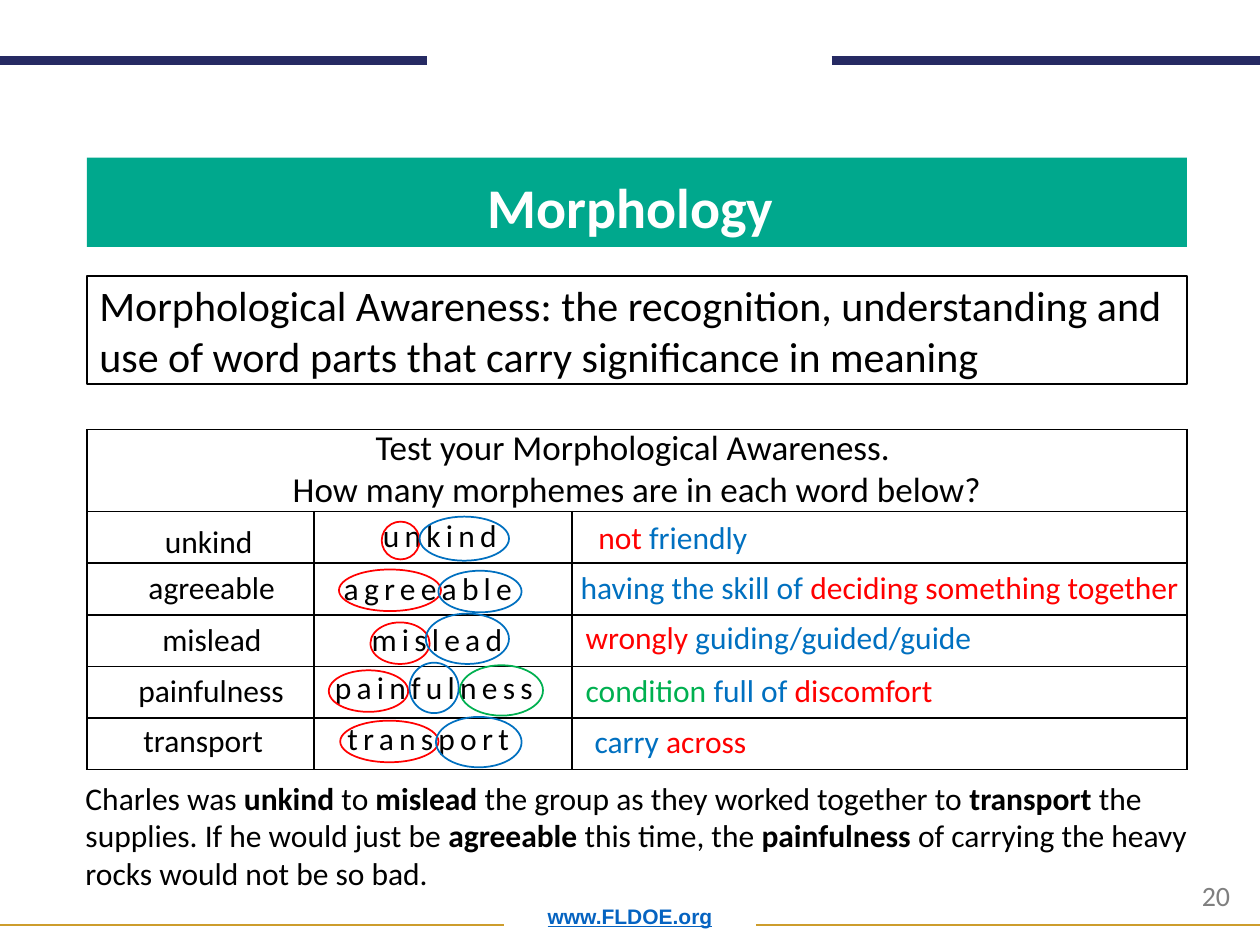
from lxml import etree
from pptx import Presentation
from pptx.dml.color import RGBColor
from pptx.enum.shapes import MSO_CONNECTOR, MSO_SHAPE
from pptx.enum.text import MSO_ANCHOR, MSO_AUTO_SIZE, PP_ALIGN
from pptx.oxml.ns import qn
from pptx.util import Inches, Pt

CENTER = PP_ALIGN.CENTER
BOTTOM = MSO_ANCHOR.BOTTOM
GROW = MSO_AUTO_SIZE.SHAPE_TO_FIT_TEXT
RECTANGLE, OVAL = MSO_SHAPE.RECTANGLE, MSO_SHAPE.OVAL
STRAIGHT = MSO_CONNECTOR.STRAIGHT

WIDTH, HEIGHT = 10, 7.5
LEFT, CONTENT_WIDTH = 0.69, 8.73
TABLE_TOP, HEADER_HEIGHT, ROW_HEIGHT = 3.41, 0.65, 0.41
COLUMNS = (1.8, 2.05, 4.88)
BOX_HEIGHT = 0.4

BLACK, WHITE, GREY = "000000", "FFFFFF", "7F7F7F"
RED, BLUE, GREEN = "FF0000", "0070C0", "00B050"
TEAL, NAVY, GOLD, LINK = "00A88D", "262A63", "CD9D2C", "0563C1"

# Boxes are (left, offset from the row's top, width); ovals add a height.
WORDS = [
    {"word": "unkind", "plain": (1.21, 0.03, 0.91), "spaced": (2.94, -0.01, 1.16),
     "ovals": [(3.03, 0.08, 0.3, 0.3, RED), (3.33, 0.04, 0.71, 0.35, BLUE)],
     "meaning": (4.65, 0, 1.4), "runs": [("not ", RED), ("friendly", BLUE)]},
    {"word": "agreeable", "plain": (1.08, -0.01, 1.22), "spaced": (2.63, 0, 1.64),
     "ovals": [(2.69, 0.05, 0.81, 0.33, RED), (3.48, 0.06, 0.66, 0.33, BLUE)],
     "meaning": (4.51, -0.01, 5.01),
     "runs": [("having the skill of ", BLUE), ("deciding something together", RED)]},
    {"word": "mislead", "plain": (1.19, -0.01, 1), "spaced": (2.85, -0.01, 1.29),
     "ovals": [(2.94, 0.06, 0.47, 0.33, RED), (3.38, -0.01, 0.66, 0.4, BLUE)],
     "meaning": (4.55, -0.02, 3.3),
     "runs": [("wrongly ", RED), ("guiding/guided/guide", BLUE)]},
    {"word": "painfulness", "plain": (1, -0.01, 1.37), "spaced": (2.56, -0.04, 1.83),
     "ovals": [(2.61, 0.03, 0.63, 0.33, RED), (3.25, -0.03, 0.39, 0.4, BLUE),
               (3.65, -0.01, 0.66, 0.4, GREEN)],
     "meaning": (4.55, -0.01, 2.99),
     "runs": [("condition ", GREEN), ("full of ", BLUE), ("discomfort", RED)]},
    {"word": "transport", "plain": (1.04, -0.03, 1.16), "spaced": (2.66, -0.04, 1.54),
     "ovals": [(2.7, 0.02, 0.78, 0.33, RED), (3.46, -0.01, 0.68, 0.4, BLUE)],
     "meaning": (4.62, -0.02, 1.42), "runs": [("carry", BLUE), (" across", RED)]},
]

# Every second piece is a bold practice word.
STORY = ["Charles was ", "unkind", " to ", "mislead",
         " the group as they worked together to ", "transport",
         " the supplies. If he would just be ", "agreeable", " this time, the ",
         "painfulness", " of carrying the heavy rocks would not be so bad."]


def color(value):
    return RGBColor.from_string(value)


def inches(*values):
    return [Inches(value) for value in values]


def style_font(font, size, value, name="Calibri", bold=False):
    font.size, font.name, font.bold = Pt(size), name, bold
    font.color.rgb = color(value)


def add_text(slide, box, paragraphs, size, align=None, wrap=True):
    """Add a text box; each paragraph is a list of (text, colour, bold) runs."""
    shape = slide.shapes.add_textbox(*inches(*box))
    frame = shape.text_frame
    frame.word_wrap, frame.auto_size = wrap, GROW
    for index, runs in enumerate(paragraphs):
        paragraph = frame.add_paragraph() if index else frame.paragraphs[0]
        paragraph.alignment = align
        for text, value, bold in runs:
            run = paragraph.add_run()
            run.text = text
            style_font(run.font, size, value, bold=bold)
    return shape


def add_shape(slide, kind, box, fill=None, line=None):
    shape = slide.shapes.add_shape(kind, *inches(*box))
    shape.shadow.inherit = False
    if fill:
        shape.fill.solid()
        shape.fill.fore_color.rgb = color(fill)
    else:
        shape.fill.background()
    if line:
        shape.line.color.rgb = color(line)
        shape.line.width = Pt(1)
    else:
        shape.line.fill.background()
    return shape


def add_rule(slide, start, end, y, value, width):
    line = slide.shapes.add_connector(STRAIGHT, *inches(start, y, end, y))
    line.line.color.rgb = color(value)
    line.line.width = Pt(width)
    etree.SubElement(line._element.spPr, qn("a:effectLst"))


def add_borders(cell):
    properties = cell._tc.get_or_add_tcPr()
    for side in ("lnL", "lnR", "lnT", "lnB"):
        border = etree.SubElement(properties, qn(f"a:{side}"), w=str(Pt(1)))
        fill = etree.SubElement(border, qn("a:solidFill"))
        etree.SubElement(fill, qn("a:srgbClr"), val=BLACK)


def add_frame(slide):
    """Add the rules, web address and page number around the content."""
    for start, end in ((0, 3.39), (6.6, WIDTH)):
        add_rule(slide, start, end, 0.48, NAVY, 5)
    for start, end in ((0, 4), (6, WIDTH)):
        add_rule(slide, start, end, 7.34, GOLD, 1)
    address = slide.shapes.add_textbox(*inches(LEFT, 7, WIDTH - 2 * LEFT, 0.42))
    frame = address.text_frame
    frame.text = "www.FLDOE.org"
    frame.word_wrap, frame.vertical_anchor = True, BOTTOM
    paragraph = frame.paragraphs[0]
    paragraph.alignment, paragraph.line_spacing = CENTER, 0.9
    font = paragraph.runs[0].font
    style_font(font, 12, LINK, "Arial", True)
    font.underline = True
    add_text(slide, (9.44, 6.92, 0.52, 0.37), [[("20", GREY, False)]], 16)


def add_heading(slide):
    title = add_shape(slide, RECTANGLE, (LEFT, 1.25, CONTENT_WIDTH, 0.71), TEAL)
    frame = title.text_frame
    frame.text = "Morphology "
    frame.vertical_anchor = BOTTOM
    paragraph = frame.paragraphs[0]
    paragraph.alignment, paragraph.line_spacing = CENTER, 0.9
    style_font(paragraph.runs[0].font, 32, WHITE, bold=True)
    add_shape(slide, RECTANGLE, (LEFT, 2.19, CONTENT_WIDTH, 0.86), WHITE, BLACK)
    definition = ("Morphological Awareness: the recognition, understanding and "
                  "use of word parts that carry significance in meaning")
    add_text(slide, (LEFT, 2.17, CONTENT_WIDTH, 0.91), [[(definition, BLACK, False)]], 24)


def add_grid(slide):
    height = HEADER_HEIGHT + ROW_HEIGHT * len(WORDS)
    table = slide.shapes.add_table(
        len(WORDS) + 1, len(COLUMNS),
        *inches(LEFT, TABLE_TOP, CONTENT_WIDTH, height)).table
    for column, width in zip(table.columns, COLUMNS):
        column.width = Inches(width)
    for index, row in enumerate(table.rows):
        row.height = Inches(ROW_HEIGHT if index else HEADER_HEIGHT)
    for cell in table.iter_cells():
        add_borders(cell)
        cell.fill.solid()
        cell.fill.fore_color.rgb = color(WHITE)
    table.cell(0, 0).merge(table.cell(0, len(COLUMNS) - 1))
    question = ("Test your Morphological Awareness. ",
                "How many morphemes are in each word below?")
    add_text(slide, (1.78, 3.33, 6.55, 0.77),
             [[(text, BLACK, False)] for text in question], 20, CENTER)


def add_word(slide, entry, top):
    """Fill one table row with a word, its circled parts and its meaning."""
    def add_label(key, runs):
        left, offset, width = entry[key]
        box = (left, top + offset, width, BOX_HEIGHT)
        return add_text(slide, box, [runs], 18, wrap=False)

    word = [(entry["word"], BLACK, False)]
    add_label("plain", word)
    spaced = add_label("spaced", word)
    spaced.text_frame.paragraphs[0].runs[0].font._element.set("spc", "300")
    add_label("meaning", [(text, value, False) for text, value in entry["runs"]])
    for left, offset, width, height, value in entry["ovals"]:
        add_shape(slide, OVAL, (left, top + offset, width, height), line=value)


def main():
    presentation = Presentation()
    presentation.slide_width, presentation.slide_height = inches(WIDTH, HEIGHT)
    slide = presentation.slides.add_slide(presentation.slide_layouts[6])
    add_frame(slide)
    add_heading(slide)
    add_grid(slide)
    for index, entry in enumerate(WORDS):
        add_word(slide, entry, TABLE_TOP + HEADER_HEIGHT + index * ROW_HEIGHT)
    story = [(text, BLACK, index % 2 == 1) for index, text in enumerate(STORY)]
    add_text(slide, (0.58, 6.13, 9.51, 1.01), [story], 18)
    presentation.save("out.pptx")


if __name__ == "__main__":
    main()
